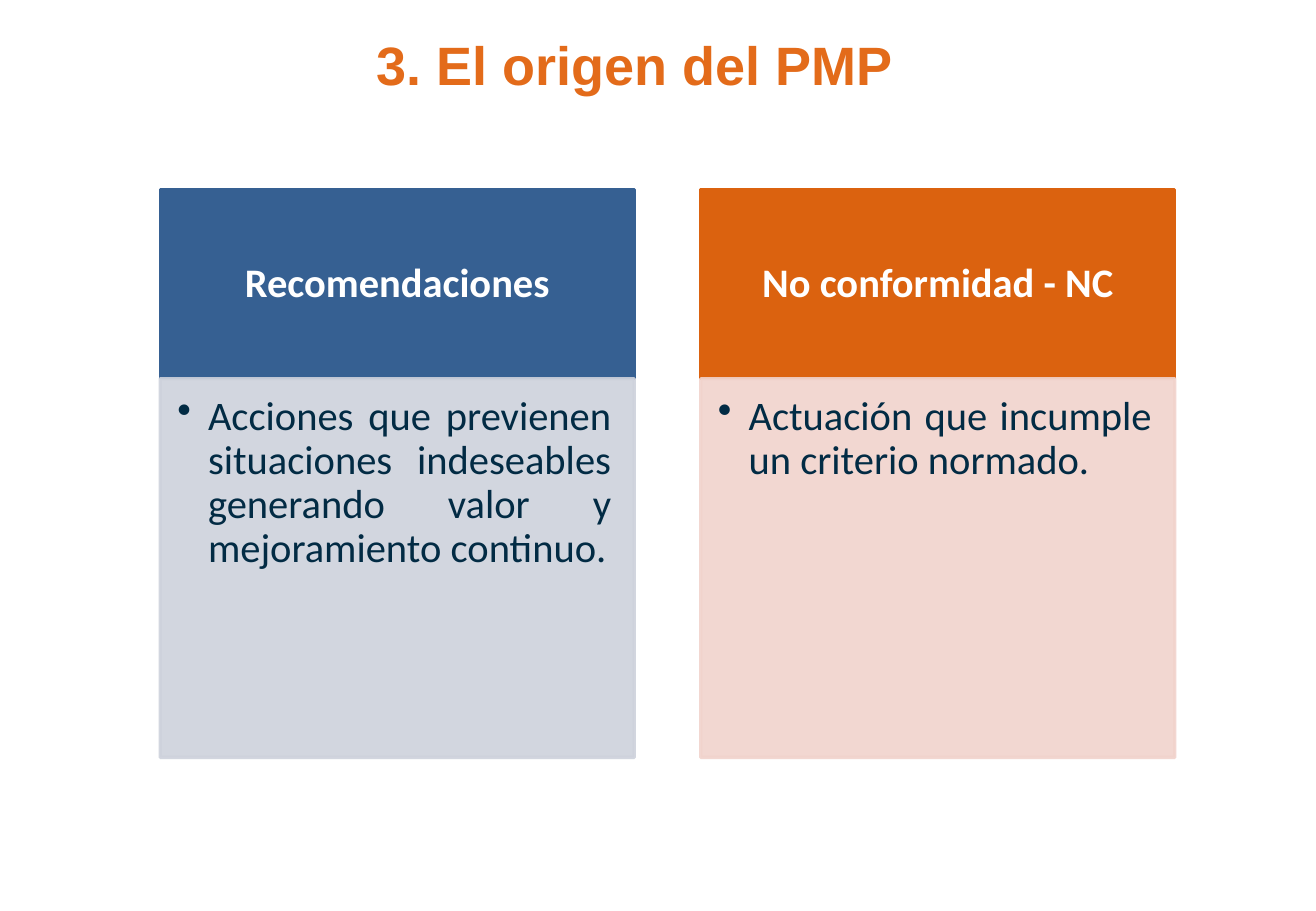
import pptx
import pptx.util
import pptx.dml.color
import pptx.enum.shapes
import pptx.enum.text
import pptx.oxml.ns
import lxml.etree

Cm = pptx.util.Cm
Pt = pptx.util.Pt
RGBColor = pptx.dml.color.RGBColor
Align = pptx.enum.text.PP_ALIGN
Anchor = pptx.enum.text.MSO_ANCHOR
qn = pptx.oxml.ns.qn

BLUE = RGBColor(0x36, 0x60, 0x92)
PALE_BLUE = RGBColor(0xCE, 0xD2, 0xDC)
ORANGE = RGBColor(0xDB, 0x62, 0x0F)
PALE_ROSE = RGBColor(0xF1, 0xD3, 0xCC)
TITLE = RGBColor(0xE3, 0x6B, 0x1A)
WHITE = RGBColor(0xFF, 0xFF, 0xFF)
NAVY = RGBColor(0x02, 0x2B, 0x44)


def style(para, font, size, color, bold, align):
    para.alignment = align
    for run in para.runs:
        run.font.name = font
        run.font.size = Pt(size)
        run.font.bold = bold
        run.font.color.rgb = color


def add_box(left, top, high, fill, text, insets):
    box = slide.shapes.add_shape(
        pptx.enum.shapes.MSO_SHAPE.RECTANGLE, left, top, WIDTH, high)
    box.shadow.inherit = False
    box.fill.solid()
    box.fill.fore_color.rgb = fill
    box.line.color.rgb = fill
    box.line.width = Pt(2)
    frame = box.text_frame
    frame.word_wrap = True
    (frame.margin_left, frame.margin_top,
     frame.margin_right, frame.margin_bottom) = [Cm(side) for side in insets]
    frame.text = text
    frame.paragraphs[0].line_spacing = 0.9
    return box


deck = pptx.Presentation()
deck.slide_width = Cm(27.51)
deck.slide_height = Cm(19.05)
slide = deck.slides.add_slide(deck.slide_layouts[5])

# Title
title = slide.shapes.title
title.left, title.top = Cm(5.97), Cm(0.53)
title.width, title.height = Cm(14.6), Cm(1.63)
frame = title.text_frame
frame.text = "3. El origen del PMP"
frame.word_wrap = True
frame.auto_size = pptx.enum.text.MSO_AUTO_SIZE.SHAPE_TO_FIT_TEXT
frame.vertical_anchor = Anchor.TOP
style(frame.paragraphs[0], "Arial", 32, TITLE, True, Align.CENTER)

# Two columns, each a header over a body twice as high
LEFT, TOP, STEP = Cm(3.35), Cm(3.96), Cm(11.3)
WIDTH, HEAD = Cm(9.91), Cm(3.96)
columns = [
    ("Recomendaciones", BLUE, PALE_BLUE,
     "Acciones que previenen situaciones indeseables generando valor "
     "y mejoramiento continuo."),
    ("No conformidad - NC", ORANGE, PALE_ROSE,
     "Actuación que incumple un criterio normado."),
]
for index, (name, dark, pale, text) in enumerate(columns):
    left = LEFT + index * STEP

    # Header
    head = add_box(left, TOP, HEAD, dark, name, (0.48, 0.28, 0.48, 0.28))
    head.text_frame.vertical_anchor = Anchor.MIDDLE
    style(head.text_frame.paragraphs[0], "Calibri", 24, WHITE, True,
          Align.CENTER)

    # Body with a bullet
    body = add_box(left, TOP + HEAD, 2 * HEAD, pale, text,
                   (0.36, 0.36, 0.48, 0.53))
    body.text_frame.vertical_anchor = Anchor.TOP
    para = body.text_frame.paragraphs[0]
    para.level = 1
    props = para._p.get_or_add_pPr()
    props.set("marL", str(Cm(0.64)))
    props.set("indent", str(-Cm(0.64)))
    lxml.etree.SubElement(props, qn("a:buChar")).set("char", "•")
    style(para, "Calibri", 24, NAVY, False, Align.JUSTIFY)

    # Slight transparency of the body's fill and line
    for color in body._element.spPr.iter(qn("a:srgbClr")):
        lxml.etree.SubElement(color, qn("a:alpha")).set("val", "90000")

deck.save("out.pptx")
